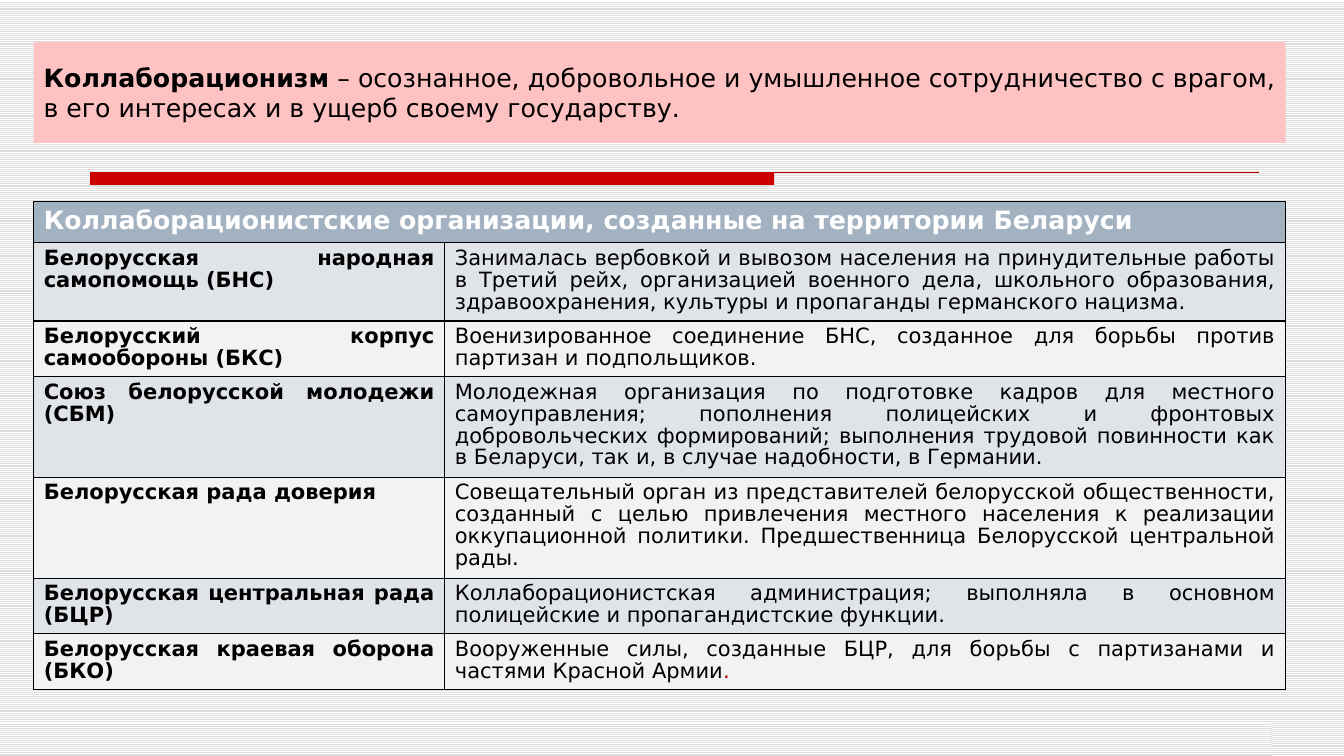
import pptx
import pptx.util
import pptx.dml.color
import pptx.enum.dml
import pptx.enum.shapes
import pptx.enum.text
import pptx.oxml
import pptx.oxml.ns
from pptx.util import Cm

FONT = "DejaVu Sans"
RED, BLACK, WHITE = "CC0000", "000000", "FFFFFF"
LEFT, WIDTH = 0.85, 31.55
COLS = (10.36, 21.19)
HEAD = 1.04            # height of the table's head row
PAD, LINE = 0.26, 0.57  # cell padding and height of a text line
BANDS = ("E0E4E9", "F0F2F4")

TERM = "Коллаборационизм"
SENSE = (" – осознанное, добровольное и умышленное сотрудничество с врагом, "
         "в его интересах и в ущерб своему государству.")
TITLE = "Коллаборационистские организации, созданные на территории Беларуси"
# Name, role, lines of text
GROUPS = [
    ("Белорусская народная самопомощь (БНС)",
     "Занималась вербовкой и вывозом населения на принудительные работы в Третий рейх, "
     "организацией военного дела, школьного образования, здравоохранения, культуры и "
     "пропаганды германского нацизма.", 3),
    ("Белорусский корпус самообороны (БКС)",
     "Военизированное соединение БНС, созданное для борьбы против партизан и "
     "подпольщиков.", 2),
    ("Союз белорусской молодежи (СБМ)",
     "Молодежная организация по подготовке кадров для местного самоуправления; пополнения "
     "полицейских и фронтовых добровольческих формирований; выполнения трудовой повинности "
     "как в Беларуси, так и, в случае надобности, в Германии.", 4),
    ("Белорусская рада доверия",
     "Совещательный орган из представителей белорусской общественности, созданный с целью "
     "привлечения местного населения к реализации оккупационной политики. Предшественница "
     "Белорусской центральной рады.", 4),
    ("Белорусская центральная рада (БЦР)",
     "Коллаборационистская администрация; выполняла в основном полицейские и "
     "пропагандистские функции.", 2),
    ("Белорусская краевая оборона (БКО)",
     "Вооруженные силы, созданные БЦР, для борьбы с партизанами и частями Красной Армии", 2),
]


def color(code):
    return pptx.dml.color.RGBColor.from_string(code)


def stripe(fill):
    """Give a fill thin grey lines on white."""
    fill.patterned()
    fill.pattern = pptx.enum.dml.MSO_PATTERN.LIGHT_HORIZONTAL
    fill.fore_color.rgb = color("DDDDDD")
    fill.back_color.rgb = color(WHITE)


def write(frame, text, size=15, bold=False, ink=BLACK, just=True, lead=None):
    """Add a run to the frame's first paragraph."""
    para = frame.paragraphs[0]
    align = pptx.enum.text.PP_ALIGN
    para.alignment = align.JUSTIFY if just else align.LEFT
    if lead:
        para.line_spacing = lead
    run = para.add_run()
    run.text = text
    run.font.name = FONT
    run.font.size = pptx.util.Pt(size)
    run.font.bold = bold
    run.font.color.rgb = color(ink)


def box(slide, left, top, width, height, fill=None):
    """Add a rectangle, striped if no fill is given."""
    shape = slide.shapes.add_shape(pptx.enum.shapes.MSO_SHAPE.RECTANGLE,
                                   Cm(left), Cm(top), Cm(width), Cm(height))
    shape.shadow.inherit = False
    if fill:
        shape.fill.solid()
        shape.fill.fore_color.rgb = color(fill)
    else:
        stripe(shape.fill)
    shape.line.fill.background()
    return shape


def rule(slide, left, right, top):
    line = slide.shapes.add_connector(pptx.enum.shapes.MSO_CONNECTOR.STRAIGHT,
                                      Cm(left), Cm(top), Cm(right), Cm(top))
    line.line.color.rgb = color(RED)
    line.line.width = pptx.util.Pt(0.75)
    line._element.spPr.append(pptx.oxml.parse_xml(
        f'<a:effectLst {pptx.oxml.ns.nsdecls("a")}/>'))


def paint(cell, fill):
    """Fill a cell and give it black borders."""
    cell.fill.solid()
    cell.fill.fore_color.rgb = color(fill)
    for place, side in enumerate("LRTB"):
        cell._tc.get_or_add_tcPr().insert(place, pptx.oxml.parse_xml(
            f'<a:ln{side} {pptx.oxml.ns.nsdecls("a")} w="12700"><a:solidFill>'
            f'<a:srgbClr val="{BLACK}"/></a:solidFill></a:ln{side}>'))


def grid(slide, top):
    heights = [HEAD] + [PAD + LINE * count for _, _, count in GROUPS]
    table = slide.shapes.add_table(len(heights), len(COLS), Cm(LEFT), Cm(top),
                                   Cm(WIDTH), Cm(sum(heights))).table
    table.first_row = table.horz_banding = False
    for col, width in zip(table.columns, COLS):
        col.width = Cm(width)
    for row, height in zip(table.rows, heights):
        row.height = Cm(height)

    # Head row
    for cell in table.rows[0].cells:
        paint(cell, "A3B2C1")
    table.cell(0, 0).merge(table.cell(0, 1))
    write(table.cell(0, 0).text_frame, TITLE, size=18, bold=True, ink=WHITE, just=False)

    # Body rows
    for index, (name, role, _) in enumerate(GROUPS):
        left, right = table.rows[index + 1].cells
        for cell in (left, right):
            paint(cell, BANDS[index % 2])
        write(left.text_frame, name, bold=True, lead=0.9)
        write(right.text_frame, role, lead=0.9)
    write(right.text_frame, ".", ink="C00000", lead=0.9)


def main():
    deck = pptx.Presentation()
    deck.slide_width, deck.slide_height = Cm(33.87), Cm(19.05)
    slide = deck.slides.add_slide(deck.slide_layouts[6])
    stripe(slide.background.fill)

    # Red divider
    box(slide, 2.27, 4.34, 17.24, 0.32, RED)
    rule(slide, 2.27, 31.72, 4.34)

    # Definition
    frame = box(slide, LEFT, 1.06, WIDTH, 2.54, "FFC2C2").text_frame
    frame.word_wrap = True
    frame.margin_left = frame.margin_right = Cm(0.25)
    frame.margin_top = frame.margin_bottom = Cm(0.5)
    frame.vertical_anchor = pptx.enum.text.MSO_ANCHOR.MIDDLE
    write(frame, TERM, size=18, bold=True)
    write(frame, SENSE, size=18)

    # Organisations and striped footer
    grid(slide, 5.08)
    box(slide, 0, 18.21, 32.05, 0.84)
    deck.save("out.pptx")


if __name__ == "__main__":
    main()
